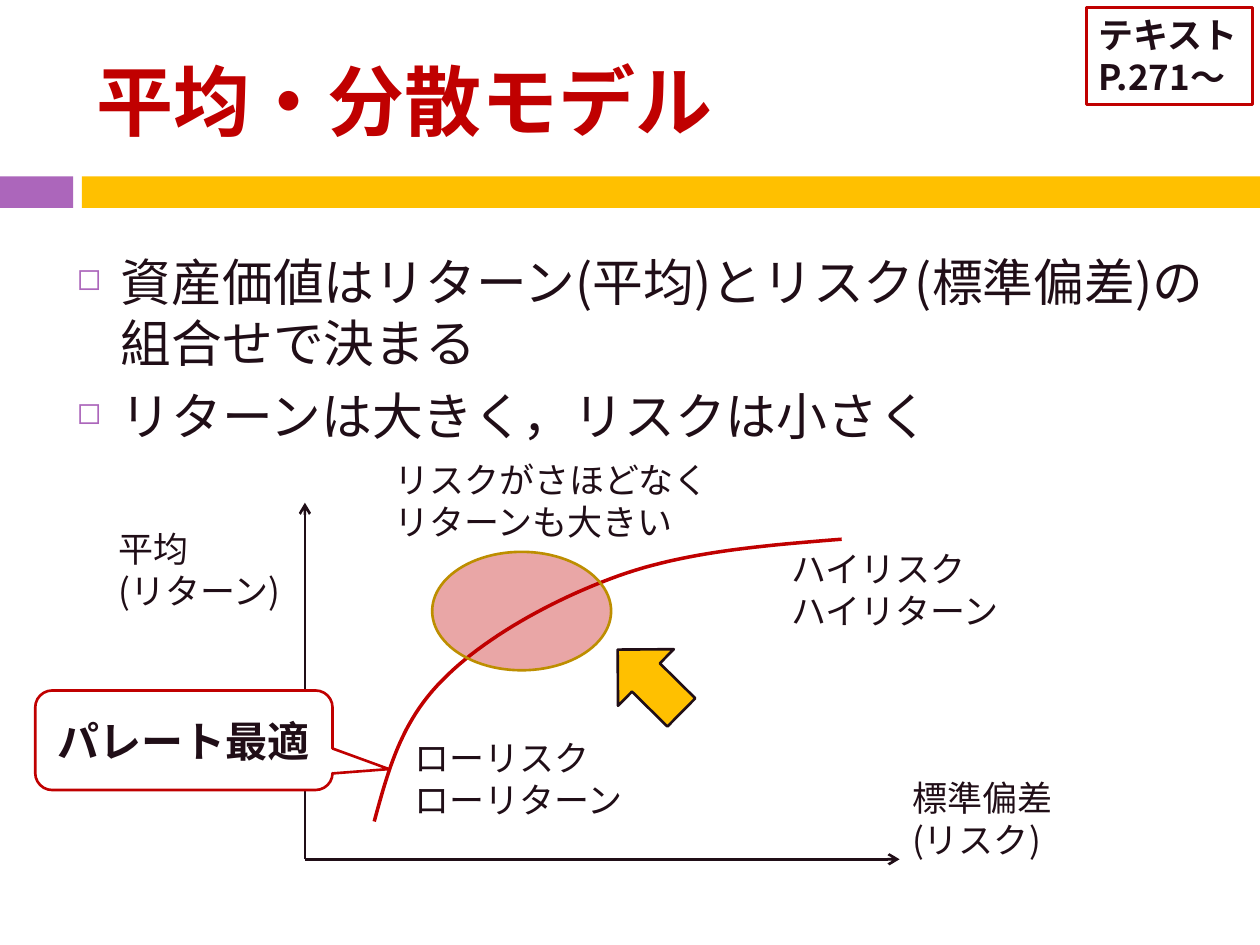
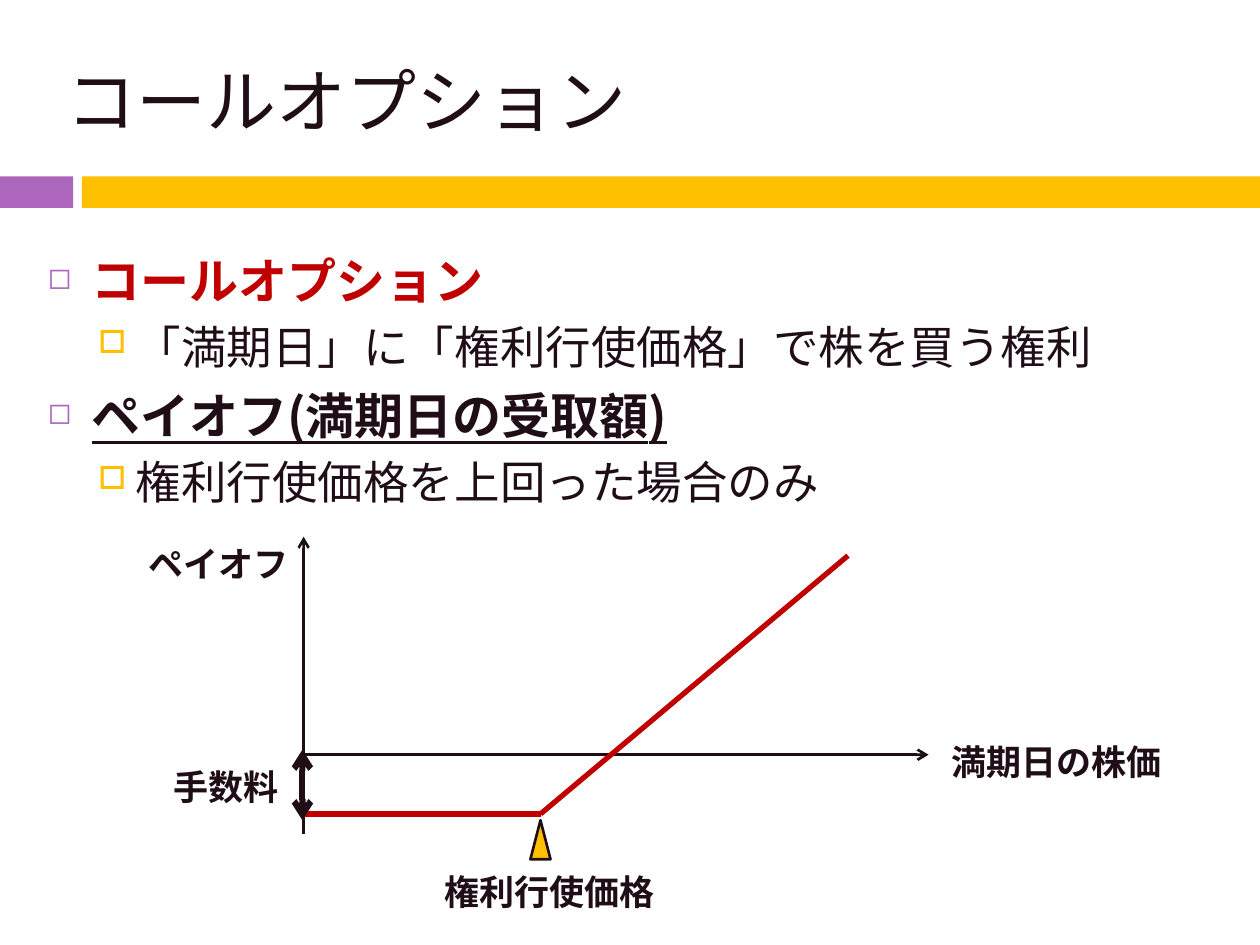
"""Builds two finance lecture slides: the mean-variance model and the call option."""
from dataclasses import dataclass

from lxml import etree
from pptx import Presentation
from pptx.dml.color import RGBColor
from pptx.enum.shapes import MSO_CONNECTOR, MSO_SHAPE
from pptx.enum.text import MSO_ANCHOR, PP_ALIGN
from pptx.oxml.ns import qn
from pptx.util import Emu, Pt

PX = 9144
STRAIGHT = MSO_CONNECTOR.STRAIGHT
RECT, ELLIPSE, TRIANGLE = MSO_SHAPE.RECTANGLE, MSO_SHAPE.OVAL, MSO_SHAPE.ISOSCELES_TRIANGLE
UP_ARROW, CALLOUT = MSO_SHAPE.UP_ARROW, MSO_SHAPE.ROUNDED_RECTANGULAR_CALLOUT
TOP, MIDDLE = MSO_ANCHOR.TOP, MSO_ANCHOR.MIDDLE
LEFT, CENTER = PP_ALIGN.LEFT, PP_ALIGN.CENTER


@dataclass(frozen=True)
class Theme:
    """Colours, font and type sizes."""
    font: str = "Noto Sans CJK JP"
    ink: str = "200E17"
    red: str = "C00000"
    gold: str = "FFC000"
    dark_gold: str = "BD8E00"
    purple: str = "AC66BB"
    white: str = "FFFFFF"
    label: int = 20
    callout: int = 24
    thin: float = 1.5


T = Theme()
LEVELS = [(35, 35, 7, "◻", T.purple, 60), (70, 30, 5.5, "□", T.gold, 70)]


def rgb(color):
    """Turn a hex string into a colour."""
    return RGBColor.from_string(color)


def px(*values):
    """Turn px lengths into EMU."""
    return [Emu(round(v * PX)) for v in values]


def add_xml(parent, tag, **attrs):
    """Append a DrawingML element."""
    return etree.SubElement(parent, qn("a:" + tag), {k: str(v) for k, v in attrs.items()})


def bezier(a, b, c, d, steps=24):
    """Sample a cubic curve, leaving out its start."""
    for i in range(1, steps + 1):
        t = i / steps
        u = 1 - t
        yield tuple(u**3 * a[k] + 3 * u * u * t * b[k] + 3 * u * t * t * c[k] + t**3 * d[k]
                    for k in (0, 1))


class Deck:
    """Holds the theme, the presentation and the current slide."""

    def __init__(self, theme):
        self.theme = theme
        self.prs = Presentation()
        self.prs.slide_width, self.prs.slide_height = px(1000, 750)
        self.s = None

    def slide(self, title, left, size, color, bold=False):
        """Start a slide with its band and title."""
        self.s = self.prs.slides.add_slide(self.prs.slide_layouts[6])
        self.shape(RECT, (0, 140, 58, 25), self.theme.purple)
        self.shape(RECT, (65, 140, 935, 25), self.theme.gold)
        self.text((left, 25, 958 - left, 108), title, size, color, bold, MIDDLE)

    def style(self, p, size, color, bold=False, underline=False):
        """Format the runs of a paragraph."""
        for r in p.runs:
            f = r.font
            f.name, f.size, f.bold, f.underline = self.theme.font, Pt(size), bold, underline
            f.color.rgb = rgb(color)
            add_xml(r._r.get_or_add_rPr(), "ea", typeface=self.theme.font)

    def set_text(self, sp, text, size, color, bold=False, anchor=TOP, align=LEFT):
        """Fill a shape with one paragraph per line of text."""
        tf = sp.text_frame
        tf.text = text
        tf.word_wrap, tf.vertical_anchor = True, anchor
        for p in tf.paragraphs:
            p.alignment = align
            self.style(p, size, color, bold)

    def text(self, box, text, size, color, bold=False, anchor=TOP):
        """Add a text box."""
        sp = self.s.shapes.add_textbox(*px(*box))
        self.set_text(sp, text, size, color, bold, anchor)

    def label(self, left, top, width, text, bold=False):
        """Add a chart label, as high as its lines."""
        height = 10 + 33 * len(text.split("\n"))
        self.text((left, top, width, height), text, self.theme.label, self.theme.ink, bold)

    def bullets(self, box, items):
        """Add a bulleted list of (level, text, size, colour, bold, underline)."""
        tf = self.s.shapes.add_textbox(*px(*box)).text_frame
        tf.word_wrap = True
        for i, (level, text, *look) in enumerate(items):
            p = tf.add_paragraph() if i else tf.paragraphs[0]
            margin, hang, before, char, color, size = LEVELS[level]
            p.text, p.level = text, level
            pPr = p._p.get_or_add_pPr()
            pPr.set("marL", str(margin * PX))
            pPr.set("indent", str(-hang * PX))
            add_xml(add_xml(pPr, "buClr"), "srgbClr", val=color)
            add_xml(pPr, "buSzPct", val=size * 1000)
            add_xml(pPr, "buChar", char=char)
            p.space_before = Pt(before if i else 0)
            self.style(p, *look)

    def shape(self, kind, box, fill=None, line=None, width=T.thin, alpha=None):
        """Add a preset shape."""
        sp = self.s.shapes.add_shape(kind, *px(*box))
        self.paint(sp, fill, line, width)
        if alpha:
            clr = sp._element.spPr.find(qn("a:solidFill")).find(qn("a:srgbClr"))
            add_xml(clr, "alpha", val=alpha * 1000)
        return sp

    def paint(self, sp, fill, line, width):
        """Set fill and outline, without a shadow."""
        sp.shadow.inherit = False
        if fill:
            sp.fill.solid()
            sp.fill.fore_color.rgb = rgb(fill)
        else:
            sp.fill.background()
        if line:
            sp.line.color.rgb, sp.line.width = rgb(line), Pt(width)
        else:
            sp.line.fill.background()

    def line(self, start, end, color, width, *arrows):
        """Add a straight line with arrowheads at the named ends."""
        cn = self.s.shapes.add_connector(STRAIGHT, *px(*start, *end))
        cn.line.color.rgb, cn.line.width = rgb(color), Pt(width)
        for arrow in arrows:
            add_xml(cn.line._get_or_add_ln(), arrow, type="arrow")
        add_xml(cn._element.spPr, "effectLst")

    def axes(self, x, y, top, bottom, right):
        """Add a vertical and a horizontal arrow."""
        for start, end in (((x, bottom), (x, top)), ((x, y), (right, y))):
            self.line(start, end, self.theme.ink, self.theme.thin, "tailEnd")

    def curve(self, start, segments, color, width):
        """Add an open curve made of cubic segments."""
        points = [start]
        for segment in segments:
            points.extend(bezier(points[-1], *segment))
        fb = self.s.shapes.build_freeform(*px(*start), scale=1.0)
        fb.add_line_segments([px(*pt) for pt in points[1:]], close=False)
        self.paint(fb.convert_to_shape(), None, color, width)


def mean_variance(d):
    """Build the mean-variance slide."""
    d.slide("平均・分散モデル", 67, 44, T.red, True)
    d.bullets((51, 194, 921, 535), [
        (0, "資産価値はリターン(平均)とリスク(標準偏差)の組合せで決まる", 29, T.ink),
        (0, "リターンは大きく，リスクは小さく", 29, T.ink),
    ])
    d.axes(242, 682, 399, 682, 714)
    d.label(84, 414, 157, "平均\n(リターン)")
    d.label(714, 611, 132, "標準偏差\n(リスク)")
    d.curve((297, 652), [
        ((308, 612), (318, 573), (351, 540)),
        ((383, 507), (438, 476), (491, 457)),
        ((544, 438), (606, 433), (668, 428)),
    ], T.red, 2)
    d.label(319, 580, 188, "ローリスク\nローリターン")
    d.label(618, 430, 188, "ハイリスク\nハイリターン")
    d.shape(UP_ARROW, (484, 505, 63, 71), T.gold, T.ink).rotation = 314.6
    pareto = d.shape(CALLOUT, (28, 548, 236, 79), T.white, T.red)
    for i, value in enumerate((0.69, 0.29, 0.17)):
        pareto.adjustments[i] = value
    d.set_text(pareto, "パレート最適", T.callout, T.ink, True, MIDDLE, CENTER)
    d.shape(ELLIPSE, (343, 438, 142, 94), T.red, T.dark_gold, alpha=35)
    d.label(303, 359, 273, "リスクがさほどなく\nリターンも大きい")
    page_note = d.shape(RECT, (862, 6, 132, 77), None, T.red, 1.75)
    d.set_text(page_note, "テキスト\nP.271～", T.label, T.ink, True)


def call_option(d):
    """Build the call option slide."""
    d.slide("コールオプション", 43, 40, T.ink)
    d.bullets((28, 194, 945, 535), [
        (0, "コールオプション", 28, T.red, True),
        (1, "「満期日」に「権利行使価格」で株を買う権利", 26, T.ink),
        (0, "ペイオフ(満期日の受取額)", 28, T.ink, True, True),
        (1, "権利行使価格を上回った場合のみ", 26, T.ink),
    ])
    d.axes(241, 599, 426, 662, 737)
    strike = (429, 646)
    d.line((241, 646), strike, T.red, 3)
    d.line(strike, (673, 441), T.red, 3)
    d.label(745, 583, 188, "満期日の株価", True)
    d.label(108, 426, 132, "ペイオフ", True)
    d.label(343, 686, 188, "権利行使価格", True)
    d.shape(TRIANGLE, (421, 651, 16, 31), T.gold, T.ink)
    d.line((240, 595), (240, 651), T.ink, 3.5, "headEnd", "tailEnd")
    d.label(128, 603, 104, "手数料", True)


def main():
    """Build and save the deck."""
    d = Deck(T)
    mean_variance(d)
    call_option(d)
    d.prs.save("out.pptx")


if __name__ == "__main__":
    main()
